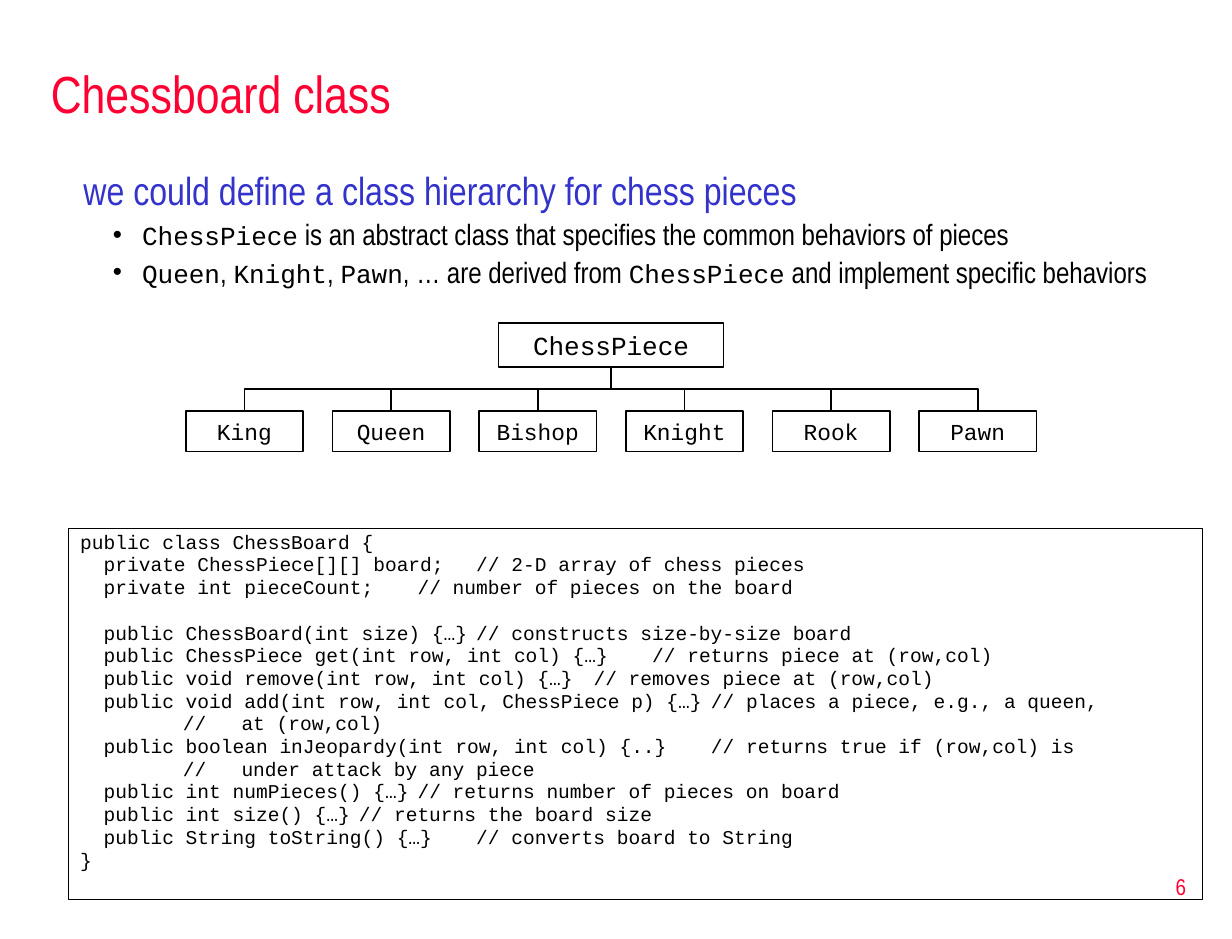
import dataclasses

import lxml.etree
import pptx
import pptx.dml.color
import pptx.enum.shapes
import pptx.enum.text
import pptx.oxml.ns
import pptx.util

Pt = pptx.util.Pt
ALIGN = pptx.enum.text.PP_ALIGN
ANCHOR = pptx.enum.text.MSO_ANCHOR
qn = pptx.oxml.ns.qn


@dataclasses.dataclass(frozen=True)
class Theme:
    red: str = "FF0033"
    blue: str = "3333CC"
    black: str = "000000"
    text_font: str = "Arial Narrow"
    code_font: str = "Courier New"
    title_size: int = 32
    heading_size: int = 24
    bullet_size: int = 18
    name_size: int = 16
    child_size: int = 14
    code_size: int = 12
    number_size: int = 14


THEME = Theme()

BULLETS = [
    [("ChessPiece", True),
     (" is an abstract class that specifies the common behaviors of pieces", False)],
    [("Queen", True), (", ", False), ("Knight", True), (", ", False), ("Pawn", True),
     (", … are derived from ", False), ("ChessPiece", True),
     (" and implement specific behaviors", False)],
]
PIECES = ["King", "Queen", "Bishop", "Knight", "Rook", "Pawn"]
FIELDS = [
    "public class ChessBoard {",
    "  private ChessPiece[][] board;\t// 2-D array of chess pieces",
    "  private int pieceCount;\t// number of pieces on the board",
]
METHODS = [
    "  public ChessBoard(int size) {…}\t// constructs size-by-size board",
    "  public ChessPiece get(int row, int col) {…}\t// returns piece at (row,col)",
    "  public void remove(int row, int col) {…}\t// removes piece at (row,col)",
    "  public void add(int row, int col, ChessPiece p) {…}\t// places a piece, e.g., a queen,",
    "\t\t//   at (row,col)",
    "  public boolean inJeopardy(int row, int col) {..}\t// returns true if (row,col) is",
    "\t\t//   under attack by any piece",
    "  public int numPieces() {…}\t// returns number of pieces on board",
    "  public int size() {…}\t// returns the board size",
    "  public String toString() {…}\t// converts board to String",
    "}",
]


def place(shape, box):
    shape.left, shape.top, shape.width, shape.height = [Pt(length) for length in box]


def set_line(shape, width):
    shape.line.color.rgb = pptx.dml.color.RGBColor.from_string(THEME.black)
    shape.line.width = Pt(width)


def add_run(paragraph, text, font, size, color):
    run = paragraph.add_run()
    run.text = text
    run.font.name = font
    run.font.size = Pt(size)
    run.font.color.rgb = pptx.dml.color.RGBColor.from_string(color)


def prepare_frame(shape, anchor):
    frame = shape.text_frame
    frame.word_wrap = True
    frame.auto_size = pptx.enum.text.MSO_AUTO_SIZE.NONE
    frame.vertical_anchor = anchor
    return frame


def next_paragraph(frame, is_first):
    return frame.paragraphs[0] if is_first else frame.add_paragraph()


def set_indent(paragraph, margin, hanging, bullet=None):
    properties = paragraph._p.get_or_add_pPr()
    properties.set("marL", str(Pt(margin)))
    properties.set("indent", str(Pt(-hanging)))
    if bullet:
        lxml.etree.SubElement(properties, qn("a:buChar")).set("char", bullet)
    else:
        lxml.etree.SubElement(properties, qn("a:buNone"))
    return properties


def fill_title(shape, box):
    place(shape, box)
    paragraph = prepare_frame(shape, ANCHOR.MIDDLE).paragraphs[0]
    paragraph.alignment = ALIGN.LEFT
    add_run(paragraph, "Chessboard class", THEME.text_font, THEME.title_size, THEME.red)


def fill_bullets(shape, box):
    place(shape, box)
    frame = prepare_frame(shape, ANCHOR.TOP)
    heading = frame.paragraphs[0]
    heading.line_spacing = 0.9
    set_indent(heading, 0, 0)
    add_run(heading, "we could define a class hierarchy for chess pieces",
            THEME.text_font, THEME.heading_size, THEME.blue)
    for parts in BULLETS:
        paragraph = frame.add_paragraph()
        paragraph.level = 1
        paragraph.line_spacing = 0.9
        set_indent(paragraph, 36, 18, "•")
        for text, is_code in parts:
            font = THEME.code_font if is_code else THEME.text_font
            size = THEME.name_size if is_code else THEME.bullet_size
            add_run(paragraph, text, font, size, THEME.black)


def add_class_box(slide, box, name, size):
    shape = slide.shapes.add_shape(
        pptx.enum.shapes.MSO_SHAPE.RECTANGLE, *[Pt(length) for length in box])
    shape.shadow.inherit = False
    shape.fill.background()
    set_line(shape, 1)
    paragraph = prepare_frame(shape, ANCHOR.MIDDLE).paragraphs[0]
    paragraph.alignment = ALIGN.CENTER
    add_run(paragraph, name, THEME.code_font, size, THEME.black)
    return shape


def add_branch(slide, parent, child):
    """Elbow line that leaves the parent downward and enters the child from above."""
    connector = slide.shapes.add_connector(
        pptx.enum.shapes.MSO_CONNECTOR.ELBOW, 0, 0, 0, 0)
    connector.begin_connect(parent, 2)
    connector.end_connect(child, 0)
    start_x, start_y = parent.left + parent.width // 2, parent.top + parent.height
    end_x, end_y = child.left + child.width // 2, child.top
    drop, span = end_y - start_y, abs(end_x - start_x)
    # A quarter turn swaps width and height around the centre
    connector.left = (start_x + end_x - drop) // 2
    connector.top = (start_y + end_y - span) // 2
    connector.width, connector.height = drop, span
    goes_right = end_x > start_x
    transform = connector._element.spPr.find(qn("a:xfrm"))
    transform.set("rot", str((270 if goes_right else 90) * 60000))
    transform.set("flipH", "1" if goes_right else "0")
    transform.set("flipV", "0")
    set_line(connector, 1)
    lxml.etree.SubElement(connector._element.spPr, qn("a:effectLst"))


def add_hierarchy(slide, box):
    left, top, width, height = box
    root_width, root_height, child_width, child_height = 138, 27, 72, 25
    pitch = (width - child_width) / (len(PIECES) - 1)
    root = add_class_box(slide, (left + (width - root_width) / 2, top, root_width, root_height),
                         "ChessPiece", THEME.name_size)
    for index, name in enumerate(PIECES):
        child_box = (left + index * pitch, top + height - child_height, child_width, child_height)
        child = add_class_box(slide, child_box, name, THEME.child_size)
        add_branch(slide, root, child)


def fill_code(shape, box):
    place(shape, box)
    set_line(shape, 0.75)
    frame = prepare_frame(shape, ANCHOR.TOP)
    for index, line in enumerate(FIELDS + METHODS):
        paragraph = next_paragraph(frame, index == 0)
        paragraph.line_spacing = 0.8
        if index == len(FIELDS):  # gap between fields and methods
            paragraph.space_before = Pt(16.5)
        properties = set_indent(paragraph, 27, 27)
        tabs = lxml.etree.SubElement(properties, qn("a:tabLst"))
        tab = lxml.etree.SubElement(tabs, qn("a:tab"))
        tab.set("pos", str(Pt(396)))
        tab.set("algn", "l")
        add_run(paragraph, line, THEME.code_font, THEME.code_size, THEME.black)


def add_page_number(slide, box):
    shape = slide.shapes.add_textbox(*[Pt(length) for length in box])
    paragraph = prepare_frame(shape, ANCHOR.MIDDLE).paragraphs[0]
    paragraph.alignment = ALIGN.RIGHT
    add_run(paragraph, "6", THEME.text_font, THEME.number_size, THEME.red)


def main():
    presentation = pptx.Presentation()
    presentation.slide_width, presentation.slide_height = Pt(756), Pt(576)
    # The two-content layout holds a title, the list and the code
    slide = presentation.slides.add_slide(presentation.slide_layouts[3])
    fill_title(slide.shapes.title, (24, 30, 714, 54))
    fill_bullets(slide.placeholders[1], (44, 102, 694, 81))
    add_hierarchy(slide, (114, 198, 522, 79))
    fill_code(slide.placeholders[2], (42, 324, 696, 228))
    add_page_number(slide, (577.5, 525, 157.5, 38))
    presentation.save("out.pptx")


if __name__ == "__main__":
    main()
